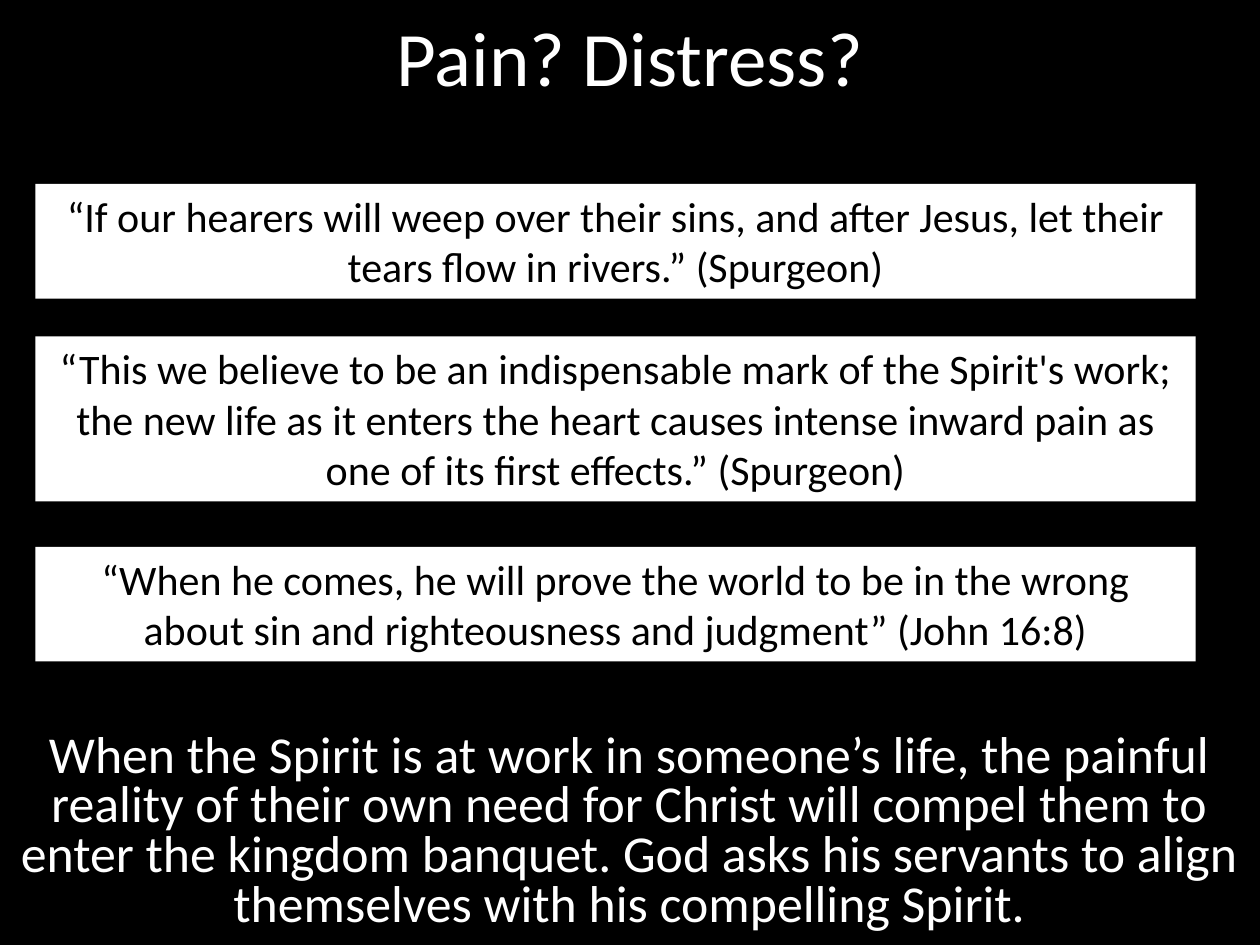
from pptx import Presentation
from pptx.dml.color import RGBColor
from pptx.enum.shapes import MSO_SHAPE
from pptx.enum.text import MSO_ANCHOR, PP_ALIGN
from pptx.util import Inches, Pt

RECTANGLE = MSO_SHAPE.RECTANGLE
TOP = MSO_ANCHOR.TOP
MIDDLE = MSO_ANCHOR.MIDDLE
CENTER = PP_ALIGN.CENTER

COLORS = {"black": "000000", "white": "FFFFFF"}
FONT = "Calibri"

QUOTES = [
    (1.46, 0.91, "“If our hearers will weep over their sins, and after Jesus, "
                 "let their tears flow in rivers.” (Spurgeon)"),
    (2.67, 1.31, "“This we believe to be an indispensable mark of the Spirit's work; "
                 "the new life as it enters the heart causes intense inward pain "
                 "as one of its first effects.” (Spurgeon)"),
    (4.34, 0.91, "“When he comes, he will prove the world to be in the wrong "
                 "about sin and righteousness and judgment” (John 16:8)"),
]
CONCLUSION = (
    "When the Spirit is at work in someone’s life, the painful reality of their own "
    "need for Christ will compel them to enter the kingdom banquet. God asks his "
    "servants to align themselves with his compelling Spirit."
)


class SlideBuilder:
    def __init__(self, slide):
        self.slide = slide

    def background(self, color):
        fill = self.slide.background.fill
        fill.solid()
        fill.fore_color.rgb = RGBColor.from_string(COLORS[color])

    def panel(self, text, left, top, width, height, size, fill, color, anchor,
              line_spacing=None):
        """Add a borderless rectangle with one centred paragraph."""
        shape = self.slide.shapes.add_shape(
            RECTANGLE, Inches(left), Inches(top), Inches(width), Inches(height))
        shape.shadow.inherit = False
        shape.fill.solid()
        shape.fill.fore_color.rgb = RGBColor.from_string(COLORS[fill])
        shape.line.fill.background()
        frame = shape.text_frame
        frame.word_wrap = True
        frame.vertical_anchor = anchor
        paragraph = frame.paragraphs[0]
        paragraph.alignment = CENTER
        paragraph.line_spacing = line_spacing
        run = paragraph.add_run()
        run.text = text
        run.font.name = FONT
        run.font.size = Pt(size)
        run.font.color.rgb = RGBColor.from_string(COLORS[color])

    def banner(self, text, top, height, size, line_spacing=None):
        self.panel(text, 0, top, 10, height, size, "black", "white", MIDDLE,
                   line_spacing)

    def quote(self, text, top, height):
        self.panel(text, 0.28, top, 9.21, height, 24, "white", "black", TOP)


def main():
    presentation = Presentation()
    presentation.slide_width = Inches(10)
    presentation.slide_height = Inches(7.5)
    slide = presentation.slides.add_slide(presentation.slide_layouts[6])

    builder = SlideBuilder(slide)
    builder.background("black")
    builder.banner("Pain? Distress?", -0.03, 0.94, 44)
    for top, height, text in QUOTES:
        builder.quote(text, top, height)
    builder.banner(CONCLUSION, 5.72, 1.78, 29.6, line_spacing=0.8)

    presentation.save("out.pptx")


if __name__ == "__main__":
    main()
